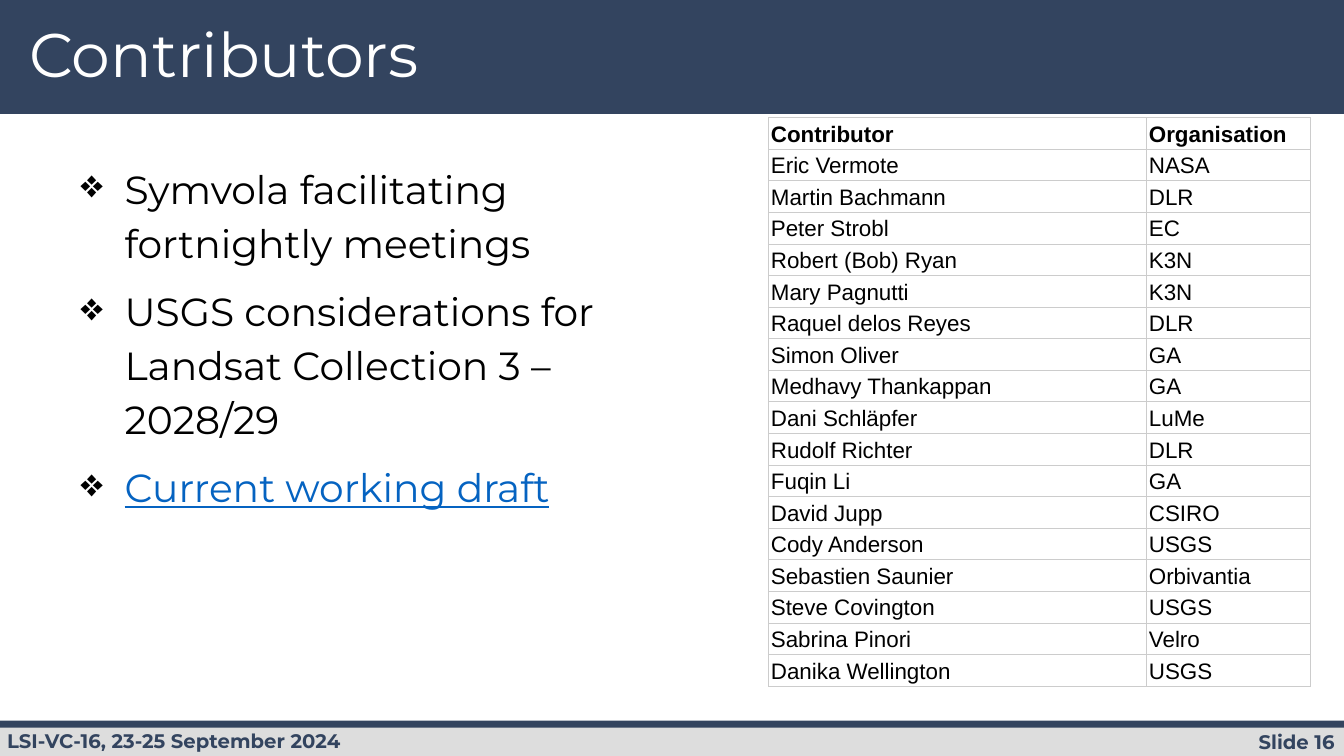
from lxml.etree import SubElement
from pptx import Presentation
from pptx.dml.color import RGBColor
from pptx.enum.shapes import MSO_SHAPE as Shape
from pptx.enum.text import MSO_ANCHOR as Anchor, PP_ALIGN as Align
from pptx.oxml.ns import qn
from pptx.util import Pt

TITLE = "Contributors"
EVENT = "LSI-VC-16, 23-25 September 2024"
SLIDE_NUMBER = "Slide 16"
POINTS = [
    "Symvola facilitating fortnightly meetings",
    "USGS considerations for Landsat Collection 3 – 2028/29",
    "Current working draft",
]
CONTRIBUTORS = [
    ("Contributor", "Organisation"),
    ("Eric Vermote", "NASA"),
    ("Martin Bachmann", "DLR"),
    ("Peter Strobl", "EC"),
    ("Robert (Bob) Ryan", "K3N"),
    ("Mary Pagnutti", "K3N"),
    ("Raquel delos Reyes", "DLR"),
    ("Simon Oliver", "GA"),
    ("Medhavy Thankappan", "GA"),
    ("Dani Schläpfer", "LuMe"),
    ("Rudolf Richter", "DLR"),
    ("Fuqin Li", "GA"),
    ("David Jupp", "CSIRO"),
    ("Cody Anderson", "USGS"),
    ("Sebastien Saunier", "Orbivantia"),
    ("Steve Covington", "USGS"),
    ("Sabrina Pinori", "Velro"),
    ("Danika Wellington", "USGS"),
]
COLORS = {"navy": "33445F", "footer": "DDDDDD", "white": "FFFFFF",
          "black": "000000", "link": "0563C1", "grid": "CCCCCC"}
WIDTH, HEIGHT = 960, 540
COLUMN_WIDTHS = (270, 117)
ROW_HEIGHT = 21.78
CELL_INSET = 1.7


def color(name):
    return RGBColor.from_string(COLORS[name])


def style(font, size, color_name, face="Montserrat", bold=False):
    font.size, font.name, font.bold = Pt(size), face, bold
    font.color.rgb = color(color_name)


def add_bar(slide, top, height, color_name):
    bar = slide.shapes.add_shape(Shape.RECTANGLE, 0, Pt(top), Pt(WIDTH), Pt(height))
    bar.shadow.inherit = False
    bar.fill.solid()
    bar.fill.fore_color.rgb = color(color_name)
    bar.line.fill.background()


def add_text(slide, bounds, lines, size, color_name, bold=False):
    box = slide.shapes.add_textbox(*map(Pt, bounds))
    frame = box.text_frame
    frame.word_wrap = True
    frame.text = "\n".join(lines)
    for para in frame.paragraphs:
        style(para.runs[0].font, size, color_name, bold=bold)
    return frame.paragraphs


def add_bullet(para):
    properties = para._p.get_or_add_pPr()
    properties.set("marL", str(Pt(36)))
    properties.set("indent", str(Pt(-31.5)))
    bullet_color = SubElement(properties, qn("a:buClr"))
    SubElement(bullet_color, qn("a:srgbClr"), val=COLORS["black"])
    SubElement(properties, qn("a:buChar"), char="❖")


def add_borders(cell):
    properties = cell._tc.get_or_add_tcPr()
    for side in ("lnL", "lnR", "lnT", "lnB"):
        line = SubElement(properties, qn(f"a:{side}"), w=str(Pt(0.68)))
        fill = SubElement(line, qn("a:solidFill"))
        SubElement(fill, qn("a:srgbClr"), val=COLORS["grid"])


def fill_cell(cell, text, bold):
    add_borders(cell)
    cell.fill.background()
    cell.margin_left = cell.margin_right = Pt(CELL_INSET)
    cell.margin_top = cell.margin_bottom = Pt(CELL_INSET)
    cell.vertical_anchor = Anchor.BOTTOM
    cell.text = text
    style(cell.text_frame.paragraphs[0].runs[0].font, 16, "black", "Arial", bold)


def add_contributor_table(slide, left, top):
    rows = len(CONTRIBUTORS)
    table = slide.shapes.add_table(
        rows, len(COLUMN_WIDTHS), Pt(left), Pt(top),
        Pt(sum(COLUMN_WIDTHS)), Pt(rows * ROW_HEIGHT)).table
    table.first_row = table.horz_banding = False
    for column, width in zip(table.columns, COLUMN_WIDTHS):
        column.width = Pt(width)
    for index, entry in enumerate(CONTRIBUTORS):
        table.rows[index].height = Pt(ROW_HEIGHT)
        for cell, text in zip(table.rows[index].cells, entry):
            fill_cell(cell, text, bold=index == 0)


def main():
    deck = Presentation()
    deck.slide_width, deck.slide_height = Pt(WIDTH), Pt(HEIGHT)
    slide = deck.slides.add_slide(deck.slide_layouts[6])

    add_bar(slide, 0, 81.4, "navy")
    add_bar(slide, 517.7, 22.3, "footer")
    add_bar(slide, 514.8, 5, "navy")
    number = add_text(slide, (808.5, 517.7, 152, 24.3), [SLIDE_NUMBER], 14, "navy", True)
    number[0].alignment = Align.RIGHT
    add_text(slide, (-2, 517, 388, 24.3), [EVENT], 14, "navy", True)

    title = add_text(slide, (13.7, 13.7, 739.5, 61.2), [TITLE], 44, "white")
    title[0].line_spacing = 0.9

    add_contributor_table(slide, 549, 84)

    points = add_text(slide, (46, 109.4, 434, 367), POINTS, 28, "black")
    for index, para in enumerate(points):
        add_bullet(para)
        para.line_spacing = 1.15
        para.space_before = Pt(10 if index else 0)
    draft = points[-1].runs[0].font
    draft.color.rgb = color("link")
    draft.underline = True

    deck.save("out.pptx")


if __name__ == "__main__":
    main()
